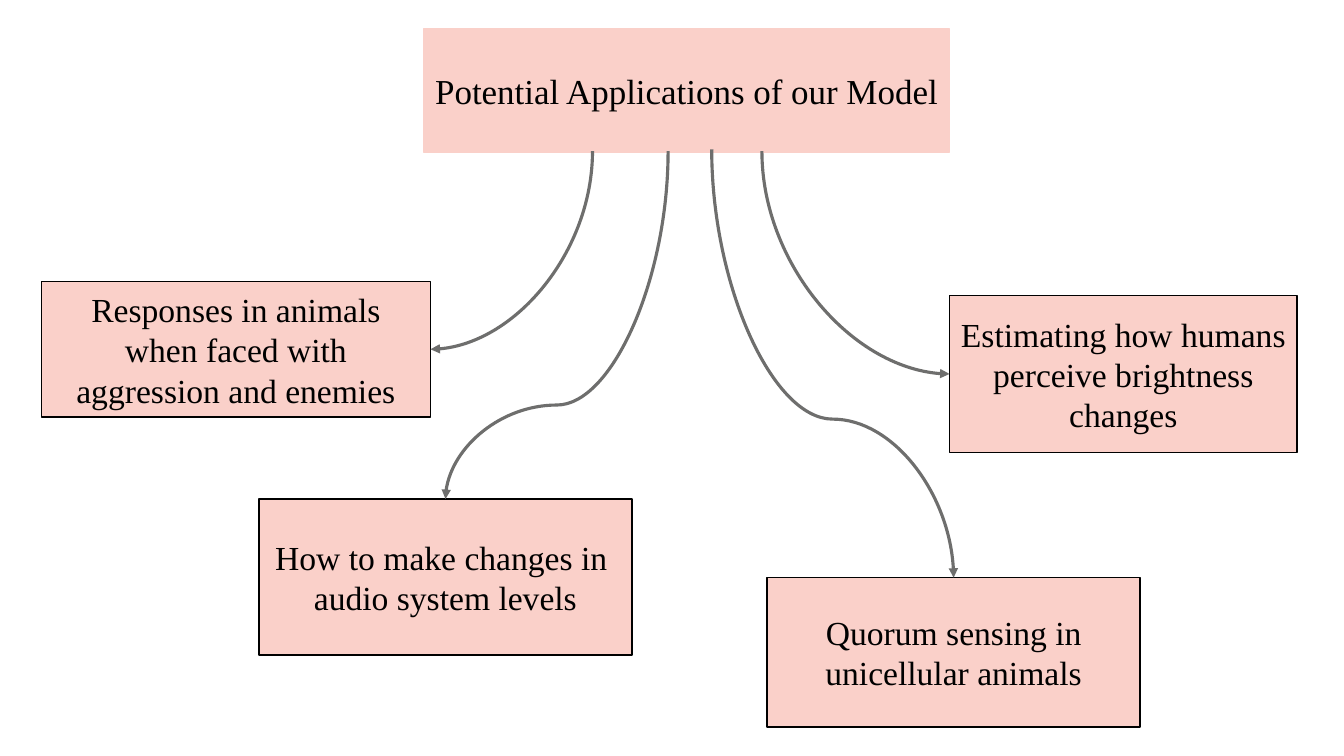
from lxml import etree
from pptx import Presentation
from pptx.dml.color import RGBColor
from pptx.enum.shapes import MSO_CONNECTOR, MSO_SHAPE
from pptx.enum.text import MSO_ANCHOR, MSO_AUTO_SIZE, PP_ALIGN
from pptx.oxml.ns import qn
from pptx.util import Pt

CURVE = MSO_CONNECTOR.CURVE
RECTANGLE = MSO_SHAPE.RECTANGLE
MIDDLE = MSO_ANCHOR.MIDDLE
NO_AUTOFIT = MSO_AUTO_SIZE.NONE
CENTER = PP_ALIGN.CENTER

PINK = RGBColor(0xFA, 0xD0, 0xC9)
BLACK = RGBColor(0x00, 0x00, 0x00)
GRAY = RGBColor(0x6E, 0x6E, 0x6D)
FONT = "Times New Roman"
TITLE_ONLY = 5

APPLICATIONS = [
    (["Responses in animals when faced with aggression and enemies"],
     (29.5, 201.3, 278, 96.5)),
    (["How to make changes in ", "audio system levels"],
     (185, 356.4, 266.4, 111.6)),
    (["Estimating how humans perceive brightness changes"],
     (678.2, 211, 248.4, 112.3)),
    (["Quorum sensing in unicellular animals"],
     (548, 412.6, 266.4, 106.6)),
]

ARROWS = [
    ((477.2, 108), (318.2, 356.4), 0.73),
    ((508.4, 106.6), (681.2, 412.6), 0.63),
    ((544.2, 108), (678.2, 267.1), None),
    ((423.2, 108), (307.5, 249.5), None),
]


def write_text(frame, lines, size=24, color=BLACK, align=CENTER):
    frame.auto_size = NO_AUTOFIT
    frame.word_wrap = True
    frame.vertical_anchor = MIDDLE
    for index, line in enumerate(lines):
        para = frame.add_paragraph() if index else frame.paragraphs[0]
        para.alignment = align
        para.line_spacing = 1.0
        para.space_before = Pt(0)
        span = para.add_run()
        span.text = line
        span.font.name = FONT
        span.font.size = Pt(size)
        span.font.color.rgb = color


def paint(box, border):
    box.fill.solid()
    box.fill.fore_color.rgb = PINK
    box.line.color.rgb = border
    box.line.width = Pt(1)


def add_title(page, text):
    title = page.shapes.title
    title.left, title.top, title.width, title.height = map(Pt, (302.4, 20.8, 376, 87.8))
    paint(title, PINK)
    write_text(title.text_frame, [text], size=25)


def add_application(page, lines, place):
    box = page.shapes.add_shape(RECTANGLE, *map(Pt, place))
    box.shadow.inherit = False
    paint(box, BLACK)
    write_text(box.text_frame, lines)


def add_curved_arrow(page, start, end, bend):
    run, drop = abs(end[0] - start[0]), end[1] - start[1]
    left = (start[0] + end[0] - drop) / 2
    top = (start[1] + end[1] - run) / 2
    arrow = page.shapes.add_connector(
        CURVE, Pt(left), Pt(top), Pt(left + drop), Pt(top + run))
    arrow.line.color.rgb = GRAY
    arrow.line.width = Pt(2.25)

    properties = arrow._element.spPr
    frame = properties.find(qn("a:xfrm"))
    if end[0] > start[0]:
        frame.set("rot", str(270 * 60000))
        frame.set("flipH", "1")
    else:
        frame.set("rot", str(90 * 60000))

    geometry = properties.find(qn("a:prstGeom"))
    if bend is None:
        geometry.set("prst", "curvedConnector2")
    else:
        guide = etree.SubElement(geometry.find(qn("a:avLst")), qn("a:gd"))
        guide.set("name", "adj1")
        guide.set("fmla", f"val {round(bend * 100000)}")

    outline = properties.find(qn("a:ln"))
    etree.SubElement(outline, qn("a:tailEnd")).set("type", "triangle")
    etree.SubElement(properties, qn("a:effectLst"))


def main():
    deck = Presentation()
    deck.slide_width, deck.slide_height = Pt(960), Pt(540)
    page = deck.slides.add_slide(deck.slide_layouts[TITLE_ONLY])
    add_title(page, "Potential Applications of our Model")
    for lines, place in APPLICATIONS:
        add_application(page, lines, place)
    for start, end, bend in ARROWS:
        add_curved_arrow(page, start, end, bend)
    deck.save("out.pptx")


if __name__ == "__main__":
    main()
